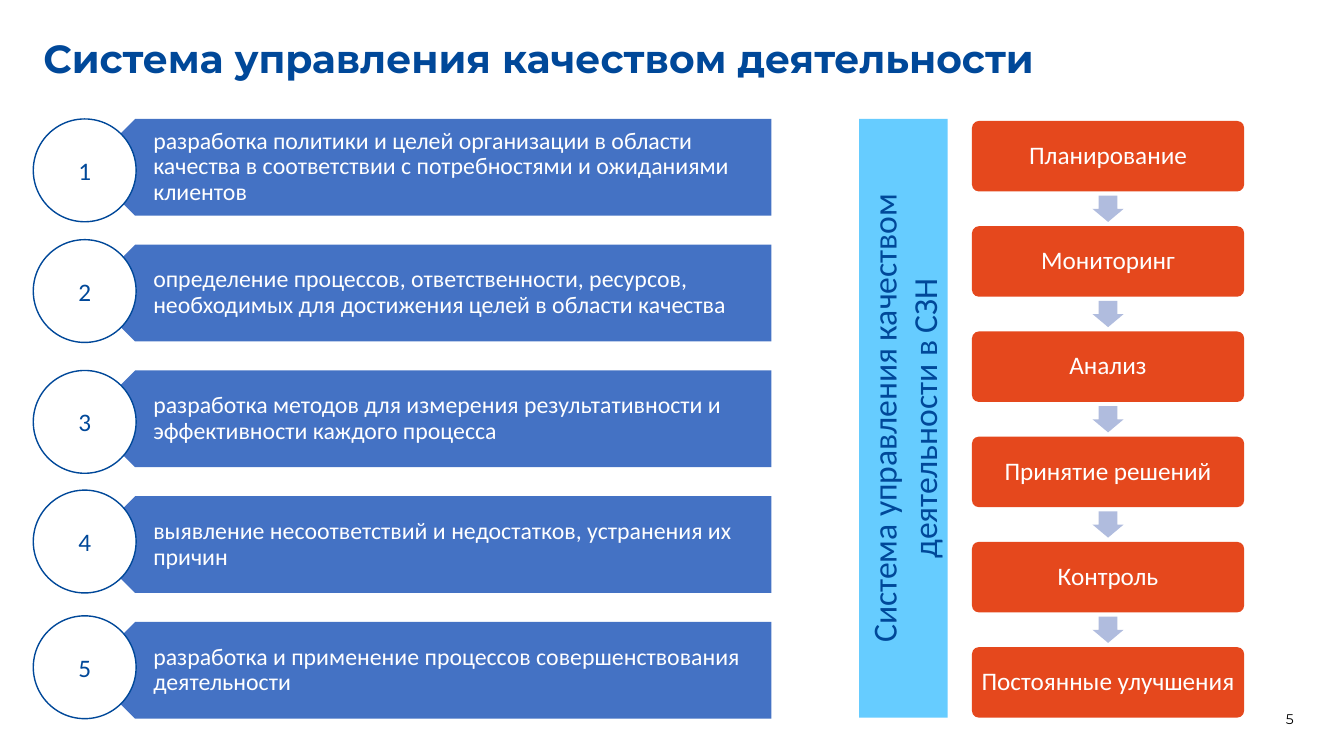
from pptx import Presentation
from pptx.dml.color import RGBColor
from pptx.enum.shapes import MSO_SHAPE
from pptx.enum.text import MSO_ANCHOR, PP_ALIGN
from pptx.util import Inches, Pt

COLORS = {
    "navy": "004899", "blue": "4472C4", "sky": "66CCFF", "orange": "E5481D",
    "arrow": "B0BCDE", "white": "FFFFFF", "black": "000000",
}
TITLE = "Система управления качеством деятельности"
BANNER = "Система управления качеством деятельности в СЗН"
TASKS = [
    "разработка политики и целей организации в области качества в соответствии с потребностями и ожиданиями клиентов",
    "определение процессов, ответственности, ресурсов, необходимых для достижения целей в области качества",
    "разработка методов для измерения результативности и эффективности каждого процесса",
    "выявление несоответствий и недостатков, устранения их причин",
    "разработка и применение процессов совершенствования деятельности",
]
BADGE_SHIFTS = [0, -0.05, 0, -0.06, -0.06]
STAGES = ["Планирование", "Мониторинг", "Анализ", "Принятие решений",
          "Контроль", "Постоянные улучшения"]


def color(name):
    return RGBColor.from_string(COLORS[name])


def write(shape, text, size, tint, align=PP_ALIGN.LEFT, font="Calibri",
          bold=False, margins=(0.1, 0.05, 0.1, 0.05), spacing=1.0):
    frame = shape.text_frame
    frame.word_wrap = True
    frame.vertical_anchor = MSO_ANCHOR.MIDDLE
    (frame.margin_left, frame.margin_top,
     frame.margin_right, frame.margin_bottom) = map(Inches, margins)
    para = frame.paragraphs[0]
    para.alignment = align
    para.line_spacing = spacing
    para.space_before = Pt(0)
    span = para.add_run()
    span.text = text
    span.font.name = font
    span.font.size = Pt(size)
    span.font.bold = bold
    span.font.color.rgb = color(tint)


def add_block(page, kind, box, fill, line=None):
    shape = page.shapes.add_shape(kind, *map(Inches, box))
    shape.shadow.inherit = False
    shape.fill.solid()
    shape.fill.fore_color.rgb = color(fill)
    if line:
        shape.line.color.rgb = color(line)
        shape.line.width = Pt(1)
    else:
        shape.line.fill.background()
    return shape


def add_title(page, box):
    title = page.shapes.title
    title.left, title.top, title.width, title.height = map(Inches, box)
    write(title, TITLE, 28, "navy", font="Montserrat", bold=True)


def add_tasks(page, box):
    left, top, width, height = box
    bar, badge = 0.96, 1.02
    step = (height - bar) / (len(TASKS) - 1)
    for index, (task, shift) in enumerate(zip(TASKS, BADGE_SHIFTS)):
        y = top + index * step
        arrow = add_block(page, MSO_SHAPE.PENTAGON,
                          (left + 0.53, y, width - 0.53, bar), "blue")
        arrow.rotation = 180
        label = page.shapes.add_textbox(
            *map(Inches, (left + 0.77, y, width - 0.77, bar)))
        write(label, task, 17, "white", margins=(0.42, 0.07, 0.13, 0.07), spacing=0.9)
        circle = add_block(page, MSO_SHAPE.OVAL,
                           (left, y + shift, badge, badge), "white", "navy")
        write(circle, str(index + 1), 18, "navy", PP_ALIGN.CENTER, margins=(0, 0, 0, 0))


def add_banner(page, box):
    banner = add_block(page, MSO_SHAPE.RECTANGLE, box, "sky")
    write(banner, BANNER, 24, "navy", PP_ALIGN.CENTER)
    banner.text_frame._txBody.bodyPr.set("vert", "vert270")


def add_stages(page, box):
    left, top, width, height = box
    card, arrow_width, arrow_height = 0.7, 0.26, 0.31
    step = (height - card) / (len(STAGES) - 1)
    for index, stage in enumerate(STAGES):
        y = top + index * step
        shape = add_block(page, MSO_SHAPE.ROUNDED_RECTANGLE,
                          (left, y, width, card), "orange")
        shape.adjustments[0] = 0.1
        write(shape, stage, 18, "white", PP_ALIGN.CENTER,
              margins=(0.05, 0.07, 0.05, 0.07), spacing=0.9)
        if index < len(STAGES) - 1:
            middle = y + (card + step) / 2
            arrow = add_block(page, MSO_SHAPE.RIGHT_ARROW,
                              (left + (width - arrow_width) / 2,
                               middle - arrow_height / 2,
                               arrow_width, arrow_height), "arrow")
            arrow.rotation = 90
            arrow.adjustments[0] = 0.6
            arrow.adjustments[1] = 0.5


def add_page_number(page, box):
    number = page.shapes.add_textbox(*map(Inches, box))
    write(number, "5", 10, "black", PP_ALIGN.RIGHT, font="Montserrat")


def main():
    deck = Presentation()
    deck.slide_width, deck.slide_height = Inches(13.33), Inches(7.5)
    page = deck.slides.add_slide(deck.slide_layouts[5])
    add_title(page, (0.33, 0.02, 10.95, 1.1))
    add_tasks(page, (0.33, 1.18, 7.32, 5.95))
    add_banner(page, (8.52, 1.18, 0.88, 5.94))
    add_stages(page, (9.64, 1.2, 2.7, 5.92))
    add_page_number(page, (9.93, 7, 3, 0.27))
    deck.save("out.pptx")


if __name__ == "__main__":
    main()
